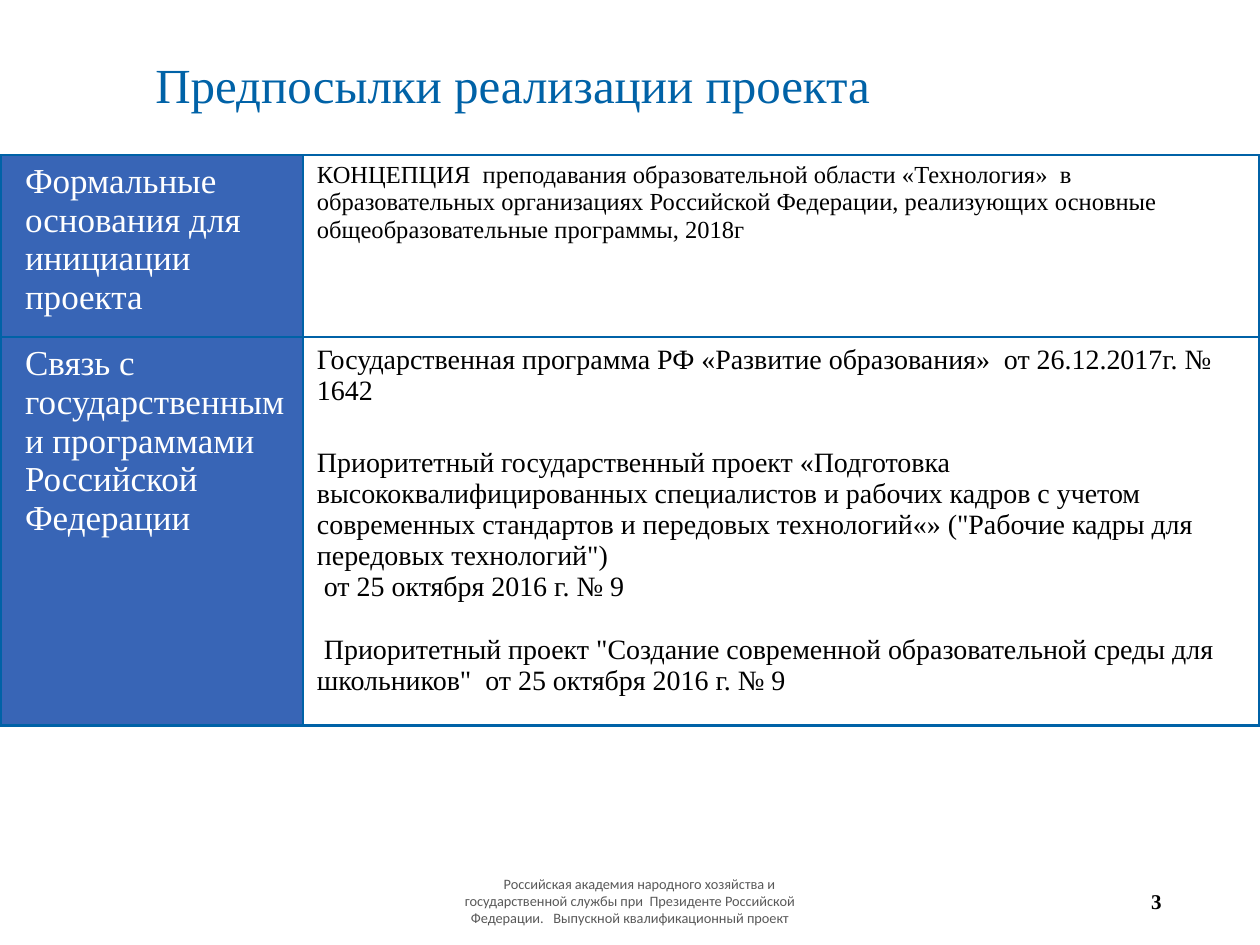
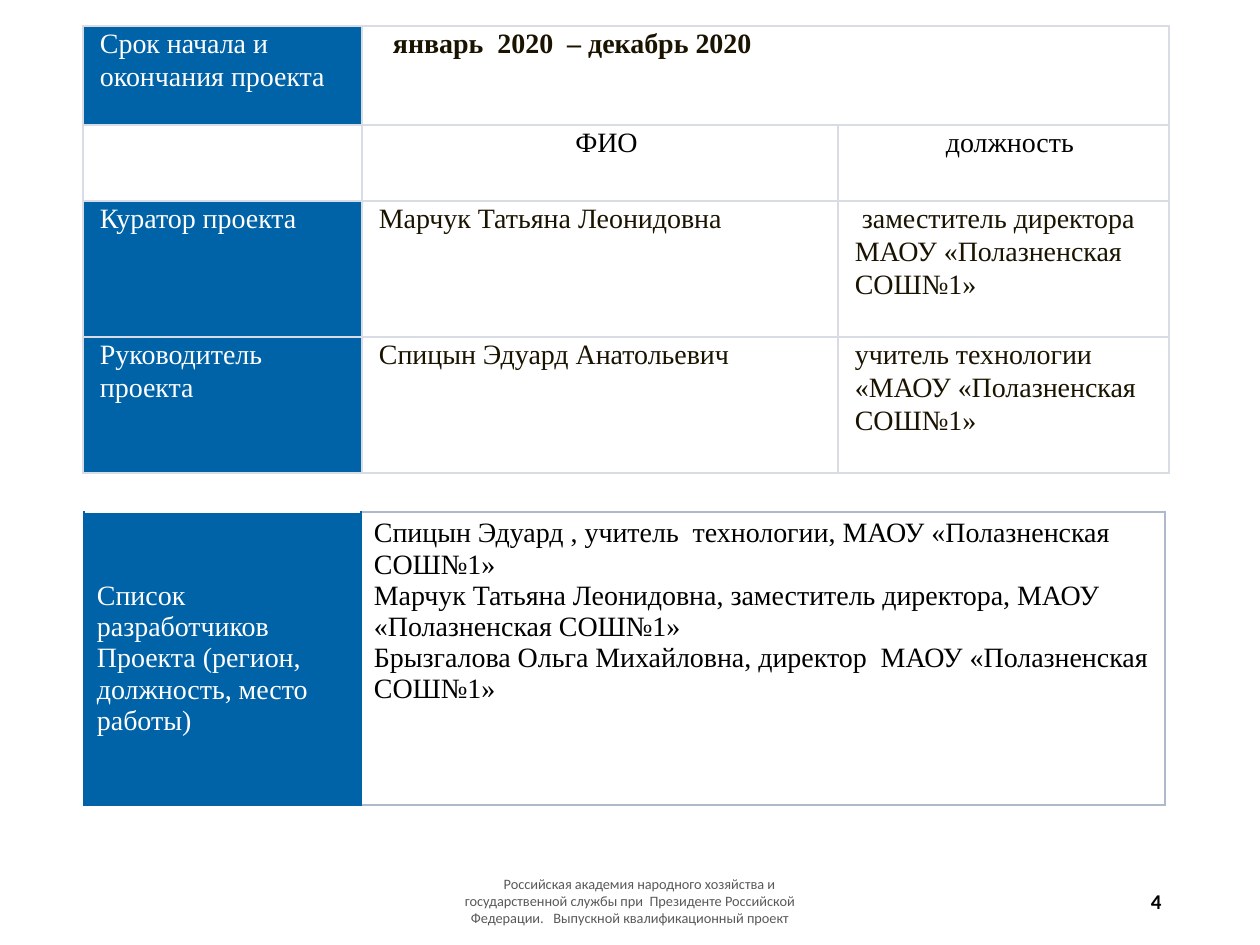
from lxml import etree
from pptx import Presentation
from pptx.dml.color import RGBColor
from pptx.enum.text import MSO_ANCHOR, PP_ALIGN
from pptx.oxml.ns import qn
from pptx.util import Emu, Pt

LEFT, CENTER, RIGHT = PP_ALIGN.LEFT, PP_ALIGN.CENTER, PP_ALIGN.RIGHT
TOP, MIDDLE, BOTTOM = MSO_ANCHOR.TOP, MSO_ANCHOR.MIDDLE, MSO_ANCHOR.BOTTOM

BLUE = RGBColor(0x00, 0x62, 0xA7)
COBALT = RGBColor(0x38, 0x65, 0xB6)
WHITE = RGBColor(0xFF, 0xFF, 0xFF)
BLACK = RGBColor(0x00, 0x00, 0x00)
BROWN = RGBColor(0x1A, 0x13, 0x00)
GRAY = RGBColor(0x59, 0x59, 0x59)
PALE = RGBColor(0xD8, 0xDC, 0xE5)
STEEL = RGBColor(0xB0, 0xB9, 0xCB)

SERIF, SANS = "Times New Roman", "Calibri"
WIDE, HIGH = 1260, 945
FOOTER = ("Российская академия народного хозяйства и государственной службы при  "
          "Президенте Российской Федерации.   Выпускной квалификационный проект")


def px(n):
    return Emu(round(n * 914400 / 126))


def write(frame, lines, size, color, font=SERIF, bold=False, align=LEFT,
          margin=0, first=0, spacing=None, gaps=()):
    """Write one paragraph per line; gaps are points of space before each."""
    for i, line in enumerate(lines):
        para = frame.paragraphs[0] if i == 0 else frame.add_paragraph()
        para.alignment = align
        if spacing:
            para.line_spacing = spacing
        if i < len(gaps):
            para.space_before = Pt(gaps[i])
        props = para._p.get_or_add_pPr()
        props.set("marL", str(px(margin)))
        props.set("indent", str(px(first)))
        run = para.add_run()
        run.text = line
        run.font.name, run.font.size, run.font.bold = font, Pt(size), bold
        run.font.color.rgb = color


def label(slide, box, text, anchor, size, color, **style):
    frame = slide.shapes.add_textbox(*map(px, box)).text_frame
    frame.word_wrap = True
    frame.vertical_anchor = anchor
    write(frame, [text], size, color, **style)


def footer(slide, page, font):
    label(slide, (432, 876, 396, 50), FOOTER, MIDDLE, 8.2, GRAY,
          font=SANS, align=CENTER, first=19)
    label(slide, (891, 876, 283, 50), str(page), MIDDLE, 12, BLACK,
          font=font, bold=True, align=RIGHT)


def grid(slide, left, top, cols, rows):
    box = (left, top, sum(cols), sum(rows))
    table = slide.shapes.add_table(len(rows), len(cols), *map(px, box)).table
    table.first_row = table.horz_banding = False
    for col, width in zip(table.columns, cols):
        col.width = px(width)
    for row, height in zip(table.rows, rows):
        row.height = px(height)
    return table


def edge(cell, lines):
    """Draw cell borders from (colour, points) pairs: left, right, top, bottom."""
    props = cell._tc.get_or_add_tcPr()
    for i, (side, (color, width)) in enumerate(zip("LRTB", lines)):
        line = etree.Element(qn("a:ln" + side), w=str(Pt(width)))
        solid = etree.SubElement(line, qn("a:solidFill"))
        etree.SubElement(solid, qn("a:srgbClr"), val=str(color))
        props.insert(i, line)


def dress(cell, fill, lines, pad, anchor=TOP):
    cell.fill.solid()
    cell.fill.fore_color.rgb = fill
    cell.margin_left = cell.margin_right = px(pad[0])
    cell.margin_top = cell.margin_bottom = px(pad[1])
    cell.vertical_anchor = anchor
    edge(cell, lines)


def basis(slide, left, top):
    """Place the table of grounds; its rows grow to fit their text."""
    heads = ["Формальные основания для инициации проекта",
             "Связь с государственными программами Российской Федерации"]
    bodies = [
        (14, ["КОНЦЕПЦИЯ  преподавания образовательной области «Технология»  в "
              "образовательных организациях Российской Федерации, реализующих основные "
              "общеобразовательные программы, 2018г"]),
        (16, ["Государственная программа РФ «Развитие образования»  от 26.12.2017г. № 1642",
              "Приоритетный государственный проект «Подготовка высококвалифицированных "
              "специалистов и рабочих кадров с учетом современных стандартов и передовых "
              "технологий«» (\"Рабочие кадры для передовых технологий\")",
              " от 25 октября 2016 г. № 9",
              " Приоритетный проект \"Создание современной образовательной среды для "
              "школьников\"  от 25 октября 2016 г. № 9"]),
    ]
    table = grid(slide, left, top, (303, 957), (121, 338))
    thin, thick = (BLUE, 1), (BLUE, 2.25)
    for i, (head, (size, body)) in enumerate(zip(heads, bodies)):
        base = thick if i == 1 else thin
        name, text = table.cell(i, 0), table.cell(i, 1)
        dress(name, COBALT, (thick, thin, thin, base), (14, 7))
        dress(text, WHITE, (thin, thick, thin, base), (14, 7))
        write(name.text_frame, [head], 20, WHITE, margin=11)
        write(text.text_frame, body, size, BLACK, gaps=(0, 23.5, 0, 17.75))


def people(slide, left, top):
    rows = [
        ("Срок начала и окончания проекта", "январь  2020  – декабрь 2020", ""),
        ("", "ФИО", "должность"),
        ("Куратор проекта", "Марчук Татьяна Леонидовна",
         " заместитель директора МАОУ «Полазненская СОШ№1»"),
        ("Руководитель проекта", "Спицын Эдуард Анатольевич",
         "учитель технологии «МАОУ «Полазненская СОШ№1»"),
    ]
    table = grid(slide, left, top, (279, 476, 331), (99, 76, 136, 136))
    table.cell(0, 1).merge(table.cell(0, 2))
    for i, row in enumerate(rows):
        for j, text in enumerate(row):
            cell = table.cell(i, j)
            named = j == 0 and text
            dress(cell, BLUE if named else WHITE, [(PALE, 1)] * 4, (4, 0))
            if text:
                date, header = (i, j) == (0, 1), i == 1
                color = WHITE if named else BLACK if header else BROWN
                write(cell.text_frame, [text], 16, color, bold=date,
                      align=CENTER if header else LEFT, margin=13,
                      first=14 if date else 0, spacing=1.07)


def authors(slide, left, top):
    table = grid(slide, left, top, (277, 804), (293,))
    name, text = table.cell(0, 0), table.cell(0, 1)
    dress(name, BLUE, ((BLUE, 1.5), (BLUE, 1), (WHITE, 1.5), (BLUE, 1.5)), (13, 6), MIDDLE)
    dress(text, WHITE, ((BLUE, 1), (STEEL, 1), (STEEL, 1), (STEEL, 1)), (13, 6))
    write(name.text_frame, ["Список разработчиков",
                            "Проекта (регион,  должность, место работы)"], 16, WHITE)
    write(text.text_frame, [
        "Спицын Эдуард , учитель  технологии, МАОУ «Полазненская СОШ№1»",
        "Марчук Татьяна Леонидовна, заместитель директора, МАОУ  «Полазненская СОШ№1»",
        "Брызгалова Ольга Михайловна, директор  МАОУ «Полазненская СОШ№1»"], 16, BLACK)


def main():
    deck = Presentation()
    deck.slide_width, deck.slide_height = px(WIDE), px(HIGH)
    blank = deck.slide_layouts[6]

    slide = deck.slides.add_slide(blank)
    footer(slide, 3, SERIF)
    basis(slide, 0, 155)
    label(slide, (107, 52, 960, 68), "Предпосылки реализации проекта", BOTTOM, 28, BLUE,
          margin=36, spacing=0.9)

    slide = deck.slides.add_slide(blank)
    footer(slide, 4, SANS)
    people(slide, 83, 26)
    authors(slide, 84, 512)

    deck.save("out.pptx")


if __name__ == "__main__":
    main()
